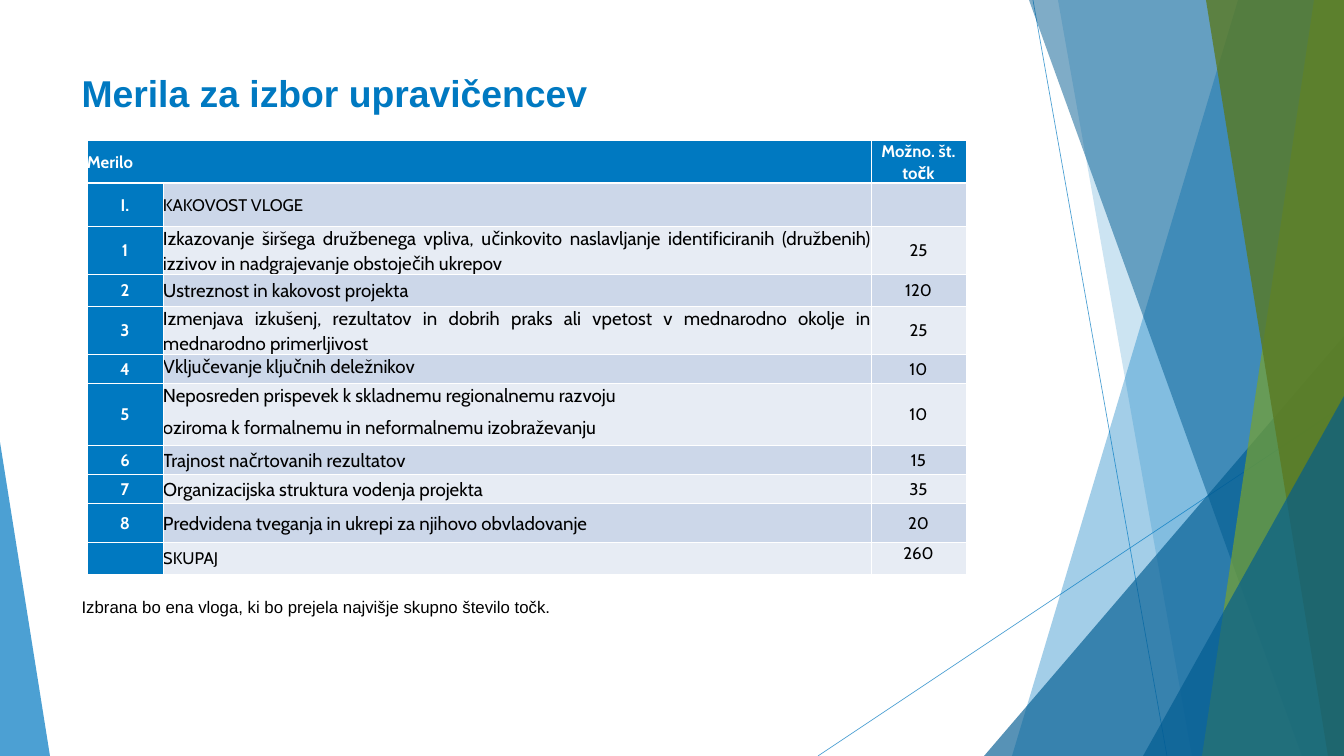
from dataclasses import dataclass

from lxml import etree
from pptx import Presentation
from pptx.dml.color import RGBColor
from pptx.enum.shapes import MSO_CONNECTOR, MSO_SHAPE
from pptx.enum.text import MSO_ANCHOR, PP_ALIGN
from pptx.oxml.ns import qn
from pptx.util import Emu, Pt

TRIANGLE = MSO_SHAPE.ISOSCELES_TRIANGLE
STRAIGHT = MSO_CONNECTOR.STRAIGHT
TOP, MIDDLE = MSO_ANCHOR.TOP, MSO_ANCHOR.MIDDLE
LEFT, CENTER, JUSTIFY = PP_ALIGN.LEFT, PP_ALIGN.CENTER, PP_ALIGN.JUSTIFY
WIDTH, HEIGHT = 1344, 756
UNIT = 914400 / 67.2


@dataclass(frozen=True)
class Theme:
    """Colours, fonts and type sizes of the deck."""
    blue: str = "0079C1"
    navy: str = "005B91"
    green: str = "78A22F"
    olive: str = "5A7A23"
    white: str = "FFFFFF"
    black: str = "000000"
    bands: tuple = ("CCD7E9", "E7ECF4")
    heading_font: str = "Arial"
    table_font: str = "Cabin"
    title: int = 40
    criterion: int = 20
    text: int = 18


def px(length):
    """Turn px into EMU."""
    return Emu(round(length * UNIT))


class SlideMaker:
    """Draw styled elements on the current page."""

    def __init__(self, page, theme):
        """Keep the page and its style."""
        self.page, self.theme = page, theme

    def fade(self, item, opacity):
        """Make every colour of an element partly transparent."""
        for colour in item.element.spPr.iter(qn("a:srgbClr")):
            etree.SubElement(colour, qn("a:alpha"), val=str(opacity * 1000))

    def paint(self, shape, colour, opacity):
        """Give a shape a transparent fill without outline."""
        shape.shadow.inherit = False
        shape.fill.solid()
        shape.fill.fore_color.rgb = RGBColor.from_string(colour)
        shape.line.fill.background()
        self.fade(shape, opacity)

    def panel(self, top_x, bottom_x, colour, opacity):
        """Fill from a slanted left edge to the right side of the page."""
        builder = self.page.shapes.build_freeform(top_x, 0, scale=UNIT)
        builder.add_line_segments([(WIDTH, 0), (WIDTH, HEIGHT), (bottom_x, HEIGHT)])
        self.paint(builder.convert_to_shape(), colour, opacity)

    def corner(self, left, width, height, peak, colour, opacity):
        """Stand a right triangle on the bottom of the page."""
        shape = self.page.shapes.add_shape(
            TRIANGLE, px(left), px(HEIGHT - height), px(width), px(height))
        shape.adjustments[0] = peak
        self.paint(shape, colour, opacity)

    def line(self, start, end, colour, opacity):
        """Draw a thin transparent line."""
        line = self.page.shapes.add_connector(STRAIGHT, *map(px, start + end))
        line.line.width = Pt(0.75)
        line.line.color.rgb = RGBColor.from_string(colour)
        etree.SubElement(line.element.spPr, qn("a:effectLst"))
        self.fade(line, opacity)

    def span(self, para, text, font, size, colour, bold=False):
        """Add one styled run."""
        span = para.add_run()
        span.text = text
        span.font.name, span.font.size, span.font.bold = font, Pt(size), bold
        span.font.color.rgb = RGBColor.from_string(colour)

    def text(self, left, top, width, height, text, size, colour, bold=False):
        """Add a wrapped line of text."""
        box = self.page.shapes.add_textbox(px(left), px(top), px(width), px(height))
        box.text_frame.word_wrap = True
        self.span(box.text_frame.paragraphs[0], text, self.theme.heading_font,
                  size, colour, bold)

    def cell(self, cell, lines, fill, align, size, colour, bold=False,
             anchor=MIDDLE, bottom=1):
        """Fill a table cell with text, colour and white borders."""
        cell.margin_left = cell.margin_right = cell.margin_top = cell.margin_bottom = 0
        cell.vertical_anchor = anchor
        for number, text in enumerate(lines):
            frame = cell.text_frame
            para = frame.add_paragraph() if number else frame.paragraphs[0]
            para.alignment, para.line_spacing, para.space_after = align, 1.07, Pt(8)
            self.span(para, text, self.theme.table_font, size, colour, bold)
        properties = cell._tc.get_or_add_tcPr()
        for side, points in (("L", 1), ("R", 1), ("T", 1), ("B", bottom)):
            border = etree.SubElement(properties, qn(f"a:ln{side}"), w=str(Pt(points)))
            paint = etree.SubElement(border, qn("a:solidFill"))
            etree.SubElement(paint, qn("a:srgbClr"), val=self.theme.white)
        cell.fill.solid()
        cell.fill.fore_color.rgb = RGBColor.from_string(fill)

    def table(self, left, top, columns, header, header_height, rows):
        """Add the table of criteria with banded rows."""
        theme = self.theme
        heights = [header_height] + [row[0] for row in rows]
        table = self.page.shapes.add_table(
            len(heights), len(columns), px(left), px(top),
            px(sum(columns)), px(sum(heights))).table
        for column, width in zip(table.columns, columns):
            column.width = px(width)
        for row, height in zip(table.rows, heights):
            row.height = px(height)
        table.cell(0, 0).merge(table.cell(0, 1))
        for column, (text, align) in enumerate(header):
            self.cell(table.cell(0, column), text, theme.blue, align,
                      theme.text, theme.white, True, bottom=3)
        for index, (_, label, lines, points, size, anchors) in enumerate(rows, 1):
            band = theme.bands[(index - 1) % 2]
            self.cell(table.cell(index, 0), label, theme.blue, CENTER,
                      theme.text, theme.white, True)
            self.cell(table.cell(index, 1), lines, band, JUSTIFY,
                      size, theme.black, anchor=anchors[0])
            self.cell(table.cell(index, 2), points, band, CENTER,
                      theme.text, theme.black, anchor=anchors[1])


def main():
    """Build and save the deck."""
    theme = Theme()
    deck = Presentation()
    deck.slide_width, deck.slide_height = px(WIDTH), px(HEIGHT)
    maker = SlideMaker(deck.slides.add_slide(deck.slide_layouts[6]), theme)

    maker.line((1033, 0), (1167, HEIGHT), theme.blue, 70)
    maker.line((1343, 406), (818, HEIGHT), theme.blue, 70)
    maker.panel(1238, 1012, theme.blue, 36)
    maker.panel(1058, 1192, theme.blue, 20)
    maker.corner(984, 360, 420, 1, theme.navy, 66)
    maker.panel(1029, 1302, theme.navy, 50)
    maker.panel(1314, 1202, theme.green, 70)
    maker.panel(1206, 1328, theme.olive, 80)
    maker.corner(1143, 201, 360, 1, theme.navy, 66)
    maker.corner(0, 50, 314, 0, theme.blue, 70)

    maker.text(75, 67, 948, 146, "Merila za izbor upravičencev",
               theme.title, theme.blue, True)
    maker.text(75, 593, 948, 74,
               "Izbrana bo ena vloga, ki bo prejela najvišje skupno število točk.",
               theme.text, theme.black)

    centred, raised = (MIDDLE, MIDDLE), (TOP, MIDDLE)
    criteria = [
        (47, ["Izkazovanje širšega družbenega vpliva, učinkovito naslavljanje "
              "identificiranih (družbenih) izzivov in nadgrajevanje obstoječih ukrepov"],
         "25", centred),
        (32, ["Ustreznost in kakovost projekta"], "120", centred),
        (47, ["Izmenjava izkušenj, rezultatov in dobrih praks ali vpetost v "
              "mednarodno okolje in mednarodno primerljivost"], "25", centred),
        (29, ["Vključevanje ključnih deležnikov"], "10", raised),
        (62, ["Neposreden prispevek k skladnemu regionalnemu razvoju",
              "oziroma k formalnemu in neformalnemu izobraževanju"], "10", raised),
        (29, ["Trajnost načrtovanih rezultatov"], "15", centred),
        (29, ["Organizacijska struktura vodenja projekta"], "35", centred),
        (39, ["Predvidena tveganja in ukrepi za njihovo obvladovanje"], "20", centred),
    ]
    rows = [(43, ["I."], ["KAKOVOST VLOGE"], [], theme.text, centred)]
    rows += [(height, [str(number)], lines, [points], theme.criterion, anchors)
             for number, (height, lines, points, anchors) in enumerate(criteria, 1)]
    rows.append((32, [], ["SKUPAJ"], ["260"], theme.text, (MIDDLE, TOP)))
    header = [(["Merilo"], LEFT), ([], LEFT), (["Možno. št. točk"], CENTER)]
    maker.table(87, 140, (76, 708, 95), header, 43, rows)
    deck.save("out.pptx")


if __name__ == "__main__":
    main()
